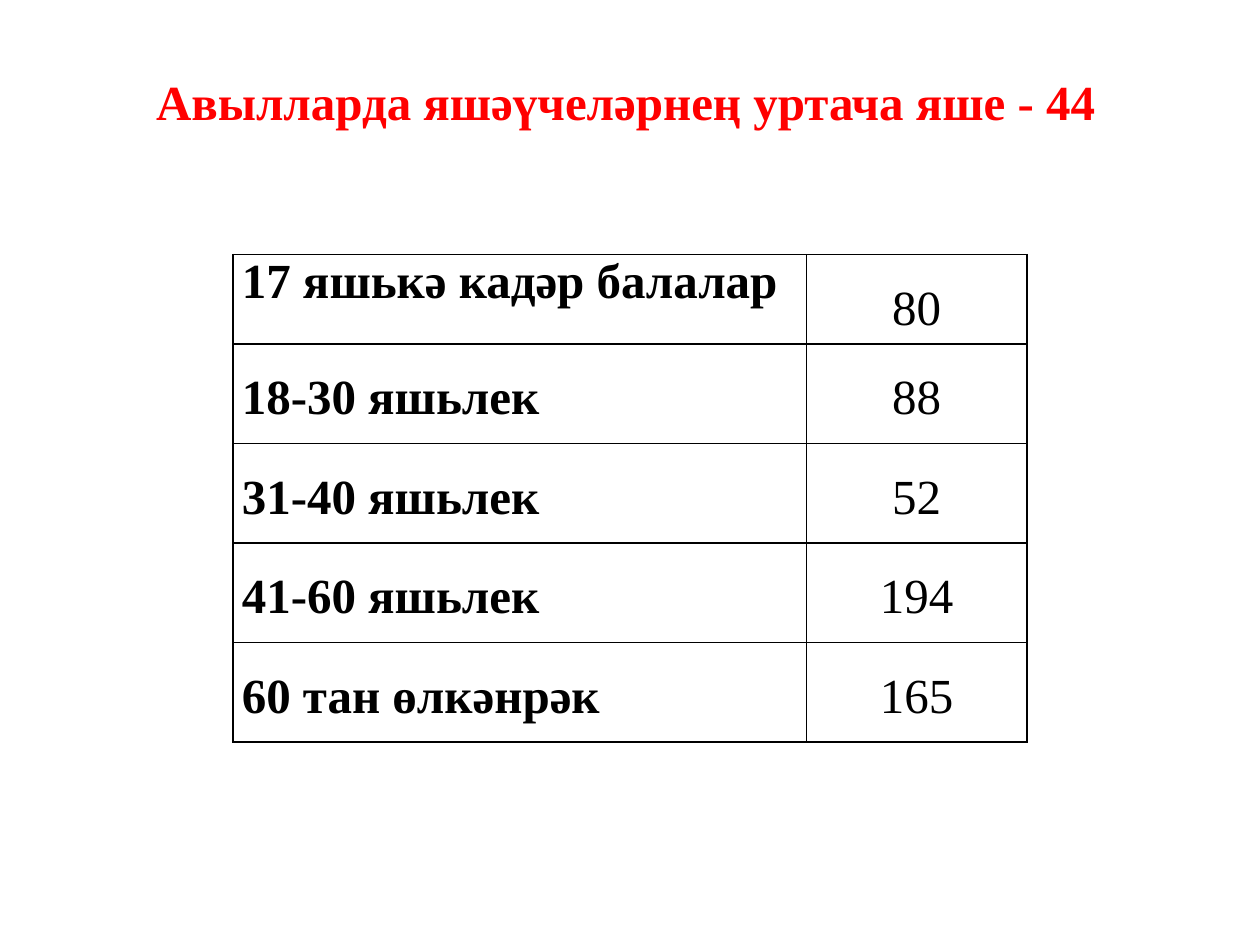
from dataclasses import dataclass

from lxml.etree import SubElement
from pptx import Presentation
from pptx.dml.color import RGBColor
from pptx.enum.text import MSO_ANCHOR as Anchor, MSO_AUTO_SIZE as AutoSize, PP_ALIGN as Align
from pptx.oxml.ns import qn
from pptx.util import Inches, Pt


@dataclass(frozen=True)
class Theme:
    font: str = "Times New Roman"
    size: int = 28
    heading: str = "FF0000"
    ink: str = "000000"
    paper: str = "FFFFFF"
    border: int = 1


@dataclass(frozen=True)
class AgeGroup:
    label: str
    residents: int
    height: float = 0.79
    label_spacing: float = 1.5


THEME = Theme()
AGE_GROUPS = [
    AgeGroup("17 яшькә кадәр балалар", 80, 0.71, 1.0),
    AgeGroup("18-30 яшьлек", 88),
    AgeGroup("31-40 яшьлек", 52),
    AgeGroup("41-60 яшьлек", 194),
    AgeGroup("60 тан өлкәнрәк", 165),
]
COLUMN_WIDTHS = (4.55, 1.75)


def apply(target, formats: dict) -> None:
    for attribute, value in formats.items():
        setattr(target, attribute, value)


def write(frame, text: str, color: str, bold: bool, align: Align, spacing: float = 1.0) -> None:
    paragraph = frame.paragraphs[0]
    apply(paragraph, {"alignment": align, "line_spacing": spacing})
    run = paragraph.add_run()
    run.text = text
    apply(run.font, {"name": THEME.font, "size": Pt(THEME.size), "bold": bold})
    run.font.color.rgb = RGBColor.from_string(color)


def outline(cell) -> None:
    properties = cell._tc.get_or_add_tcPr()
    for position, side in enumerate(("lnL", "lnR", "lnT", "lnB")):
        line = SubElement(properties, qn(f"a:{side}"), w=str(Pt(THEME.border)))
        fill = SubElement(line, qn("a:solidFill"))
        SubElement(fill, qn("a:srgbClr"), val=THEME.ink)
        properties.insert(position, line)


def draw_cell(cell, text: str, bold: bool, align: Align, spacing: float) -> None:
    apply(cell, {
        "margin_left": Inches(0.07),
        "margin_right": Inches(0.07),
        "margin_top": 0,
        "margin_bottom": 0,
        "vertical_anchor": Anchor.TOP,
    })
    cell.fill.solid()
    cell.fill.fore_color.rgb = RGBColor.from_string(THEME.paper)
    outline(cell)
    write(cell.text_frame, text, THEME.ink, bold, align, spacing)


def draw_heading(heading, text: str) -> None:
    apply(heading, {
        "left": Inches(0.75),
        "top": Inches(0.52),
        "width": Inches(8.43),
        "height": Inches(0.88),
    })
    apply(heading.text_frame, {
        "word_wrap": True,
        "auto_size": AutoSize.NONE,
        "vertical_anchor": Anchor.TOP,
    })
    write(heading.text_frame, text, THEME.heading, True, Align.CENTER)


def draw_age_table(slide, groups: list[AgeGroup]) -> None:
    table = slide.shapes.add_table(
        len(groups), len(COLUMN_WIDTHS), Inches(1.85), Inches(2.02),
        Inches(sum(COLUMN_WIDTHS)), Inches(sum(group.height for group in groups)),
    ).table
    apply(table, {"first_row": False, "horz_banding": False})
    for column, width in zip(table.columns, COLUMN_WIDTHS):
        column.width = Inches(width)
    for row, group in zip(table.rows, groups):
        row.height = Inches(group.height)
        label, residents = row.cells
        draw_cell(label, group.label, True, Align.LEFT, group.label_spacing)
        draw_cell(residents, str(group.residents), False, Align.CENTER, 1.5)


def main() -> None:
    deck = Presentation()
    apply(deck, {"slide_width": Inches(10), "slide_height": Inches(7.5)})
    slide = deck.slides.add_slide(deck.slide_layouts[5])
    draw_age_table(slide, AGE_GROUPS)
    draw_heading(slide.shapes.title, "Авылларда яшәүчеләрнең уртача яше - 44")
    deck.save("out.pptx")


if __name__ == "__main__":
    main()
